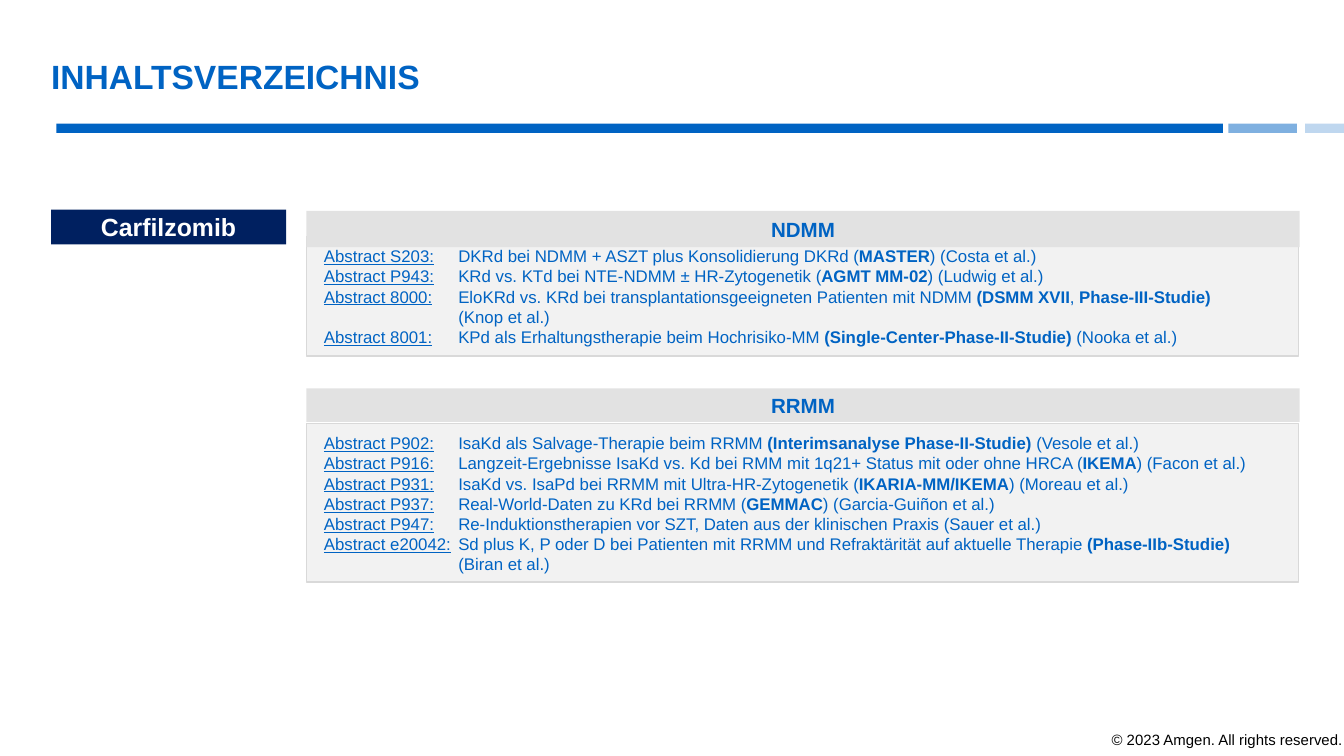
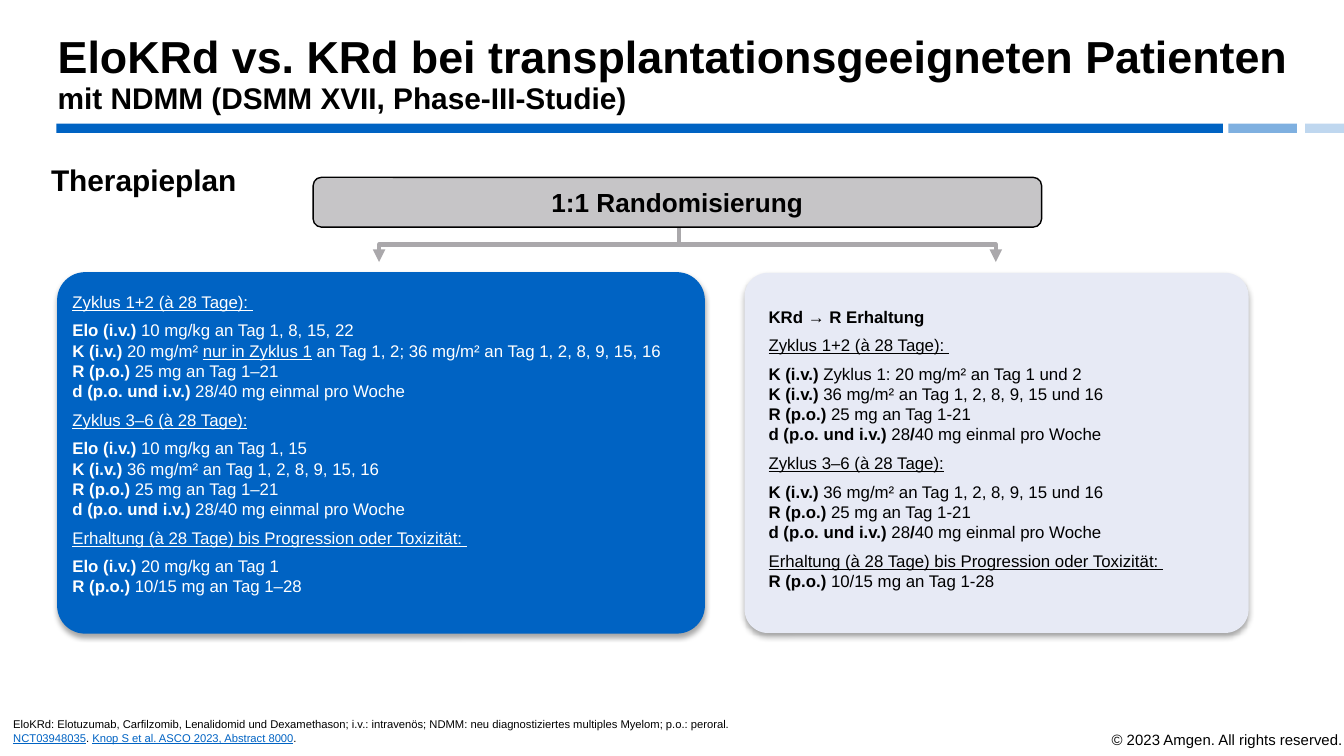
from lxml import etree
from pptx import Presentation
from pptx import util as u
from pptx.dml.color import RGBColor
from pptx.enum import shapes, text
from pptx.oxml.ns import qn

BLUE = RGBColor(0x00, 0x63, 0xC3)
NAVY = RGBColor(0x00, 0x20, 0x60)
WHITE = RGBColor(0xFF, 0xFF, 0xFF)
BLACK = RGBColor(0x00, 0x00, 0x00)
PALE = RGBColor(0xF2, 0xF2, 0xF2)
EDGE = RGBColor(0xD9, 0xD9, 0xD9)
HEAD = RGBColor(0xE2, 0xE2, 0xE2)
MIST = RGBColor(0xE7, 0xEA, 0xF5)
STONE = RGBColor(0xC6, 0xC5, 0xC7)
ARROW = RGBColor(0xAA, 0xA8, 0xAB)

WIDTH = u.Inches(10)
HEIGHT = WIDTH * 9 // 16
FONT = "Arial"
RECT = shapes.MSO_SHAPE.RECTANGLE
ROUND = shapes.MSO_SHAPE.ROUNDED_RECTANGLE
TOP, MID, LOW = text.MSO_ANCHOR.TOP, text.MSO_ANCHOR.MIDDLE, text.MSO_ANCHOR.BOTTOM
LEFT, MIDDLE, RIGHT = text.PP_ALIGN.LEFT, text.PP_ALIGN.CENTER, text.PP_ALIGN.RIGHT

PLAIN = (0.1, 0.05, 0.1, 0.05)
TITLE = (0, 0, 0, 0.05)
PANEL = (0.13, 0.07, 0.13, 0.07)

NDMM = [
    "_Abstract S203:_\tDKRd bei NDMM + ASZT plus Konsolidierung DKRd (*MASTER*) (Costa et al.)",
    "_Abstract P943:_\tKRd vs. KTd bei NTE-NDMM ± HR-Zytogenetik (*AGMT MM-02*) (Ludwig et al.)",
    "_Abstract 8000:_\tEloKRd vs. KRd bei transplantationsgeeigneten Patienten mit NDMM "
    "*(DSMM XVII*, *Phase-III-Studie)*",
    "\t(Knop et al.)",
    "_Abstract 8001:_\tKPd als Erhaltungstherapie beim Hochrisiko-MM "
    "*(Single-Center-Phase-II-Studie)* (Nooka et al.)",
]
RRMM = [
    "_Abstract P902:_\tIsaKd als Salvage-Therapie beim RRMM "
    "*(Interimsanalyse Phase-II-Studie) *(Vesole et al.)",
    "_Abstract P916:_\tLangzeit-Ergebnisse IsaKd vs. Kd bei RMM mit 1q21+ Status "
    "mit oder ohne HRCA (*IKEMA*) (Facon et al.)",
    "_Abstract P931:_\tIsaKd vs. IsaPd bei RRMM mit Ultra-HR-Zytogenetik "
    "(*IKARIA-MM/IKEMA*) (Moreau et al.)",
    "_Abstract P937:_\tReal-World-Daten zu KRd bei RRMM (*GEMMAC*) (Garcia-Guiñon et al.)",
    "_Abstract P947:_\tRe-Induktionstherapien vor SZT, Daten aus der klinischen Praxis (Sauer et al.)",
    "_Abstract e20042:_\tSd plus K, P oder D bei Patienten mit RRMM und Refraktärität "
    "auf aktuelle Therapie *(Phase-IIb-Studie)*",
    "\t(Biran et al.)",
]

START = "_Zyklus 1+2 (à 28 Tage): _"
NEXT = "_Zyklus 3–6 (à 28 Tage):_"
KEEP = "_Erhaltung (à 28 Tage) bis Progression oder Toxizität: _"
ELO_END = "*R (p.o.) *25 mg an Tag 1–21 \n*d (p.o. und i.v.) *28/40 mg einmal pro Woche"
KRD_END = ("*K (i.v.) *36 mg/m² an Tag 1, 2, 8, 9, 15 und 16 \n*R (p.o.) *25 mg an Tag 1-21 \n"
           "*d (p.o. und i.v.) *28*/*40 mg einmal pro Woche")
ELO = [
    START,
    "*Elo (i.v.) *10 mg/kg an Tag 1, 8, 15, 22 \n*K (i.v.)* 20 mg/m² _nur in Zyklus 1_ "
    "an Tag 1, 2; 36 mg/m² an Tag 1, 2, 8, 9, 15, 16\n" + ELO_END,
    NEXT,
    "*Elo (i.v.)* 10 mg/kg an Tag 1, 15\n*K (i.v.)* 36 mg/m² an Tag 1, 2, 8, 9, 15, 16\n" + ELO_END,
    KEEP,
    "*Elo (i.v.)* 20 mg/kg an Tag 1\n*R (p.o.)* 10/15 mg an Tag 1–28",
]
KRD = [
    "*KRd → R Erhaltung*",
    START,
    "*K (i.v.) *Zyklus 1: 20 mg/m² an Tag 1 und 2",
    KRD_END,
    NEXT,
    KRD_END,
    KEEP + "\n*R (p.o.) *10/15 mg an Tag 1-28",
]
NOTES = [
    "EloKRd: Elotuzumab, Carfilzomib, Lenalidomid und Dexamethason; i.v.: intravenös; "
    "NDMM: neu diagnostiziertes multiples Myelom; p.o.: peroral.",
    "_NCT03948035_. _Knop S et al. ASCO 2023, Abstract 8000_.",
]


def apply(item, **vals):
    for key, val in vals.items():
        setattr(item, key, val)


def node(parent, tag, **attrs):
    return etree.SubElement(parent, qn(tag), **attrs)


def split(line):
    for i, part in enumerate(line.split("*")):
        for j, piece in enumerate(part.split("_")):
            if piece:
                yield piece, i % 2 == 1, j % 2 == 1


def add_run(para, words, size, color, **form):
    for i, bit in enumerate(words.split("\n")):
        if i:
            para.add_line_break()
            node(para._p[-1], "a:rPr", sz=str(int(size * 100)))
        if bit:
            run = para.add_run()
            run.text = bit
            apply(run.font, name=FONT, size=u.Pt(size), **form)
            run.font.color.rgb = color


def write(shape, lines, size, color, align=LEFT, anchor=TOP, pad=PLAIN,
          link=None, tab=None, sizes=(), tight=(), **form):
    frame = shape.text_frame
    sides = ("margin_left", "margin_top", "margin_right", "margin_bottom")
    apply(frame, word_wrap=True, vertical_anchor=anchor,
          **{side: u.Inches(gap) for side, gap in zip(sides, pad)})
    for i, line in enumerate(lines):
        para = frame.add_paragraph() if i else frame.paragraphs[0]
        apply(para, alignment=align, **form)
        if i in tight:
            para.space_after = u.Pt(0)
        if tab:
            node(node(para._p.get_or_add_pPr(), "a:tabLst"), "a:tab",
                 pos=str(u.Inches(tab)), algn="l")
        for words, bold, under in split(line):
            add_run(para, words, sizes[i] if sizes else size,
                    link if under and link else color, bold=bold, underline=under)


def add_text(slide, at, lines, size, color, **form):
    box = slide.shapes.add_textbox(*map(u.Inches, at))
    write(box, lines, size, color, **form)


def add_box(slide, at, fill, kind=RECT, edge=None, bend=None):
    box = slide.shapes.add_shape(kind, *map(u.Inches, at))
    box.shadow.inherit = False
    box.fill.solid()
    box.fill.fore_color.rgb = fill
    if edge is None:
        box.line.fill.background()
    else:
        box.line.color.rgb = edge
        box.line.width = u.Pt(0.75)
    if bend:
        box.adjustments[0] = bend
    return box


def add_card(slide, at, fill, bend, edge=None):
    card = add_box(slide, at, fill, ROUND, edge, bend)
    glow = node(card._element.spPr.find(qn("a:effectLst")), "a:outerShdw",
                blurRad=str(u.Pt(3.1)), dist=str(u.Pt(1.8)), dir="5400000",
                algn="t", rotWithShape="0")
    node(node(glow, "a:srgbClr", val=str(BLACK)), "a:alpha", val="35000")


def add_panel(slide, top, head, name, body, high, lines, anchor):
    box = add_box(slide, (2.28, body, 7.38, high), PALE, edge=EDGE)
    write(box, lines, 9, BLUE, anchor=anchor, pad=PANEL, tab=1)
    bar = add_box(slide, (2.28, top, 7.39, head), HEAD)
    write(bar, [f"*{name}*"], 11, BLUE, align=MIDDLE, anchor=MID, pad=PANEL)


def add_branch(slide, x, y, end_x, end_y):
    mid_x, mid_y = (x + end_x) / 2, (y + end_y) / 2
    half = abs(end_x - x) / 2
    right = end_x > x
    side = (end_y - y) / 2 * (-1 if right else 1)
    ends = (mid_x - side, mid_y - half, mid_x + side, mid_y + half)
    line = slide.shapes.add_connector(shapes.MSO_CONNECTOR.ELBOW, *map(u.Inches, ends))
    line.line.width = u.Pt(2.25)
    line.line.color.rgb = ARROW
    props = line._element.spPr
    props.find(qn("a:xfrm")).set("rot", "16200000" if right else "5400000")
    node(props.find(qn("a:ln")), "a:tailEnd", type="triangle")
    node(props, "a:effectLst")


def new_slide(deck):
    slide = deck.slides.add_slide(deck.slide_layouts[6])
    for left, width, tint in ((0.42, 8.68, 100), (9.14, 0.51, 50), (9.71, 0.29, 25)):
        band = add_box(slide, (left, 0.92, width, 0.07), BLUE)
        if tint < 100:
            color = band._element.spPr.find(qn("a:solidFill"))[0]
            node(color, "a:alpha", val=str(tint * 1000))
    add_text(slide, (5.09, 5.39, 5, 0.24), ["© 2023 Amgen. All rights reserved."],
             8, BLACK, align=RIGHT)
    return slide


def add_title(slide, at, lines, size, color, **form):
    add_text(slide, at, [f"*{line}*" for line in lines], size, color,
             anchor=LOW, pad=TITLE, line_spacing=0.9, **form)


def index(deck):
    slide = new_slide(deck)
    add_title(slide, (0.38, 0.27, 9.22, 0.5), ["INHALTSVERZEICHNIS"], 18, BLUE)
    tag = add_box(slide, (0.38, 1.56, 1.75, 0.26), NAVY)
    write(tag, ["*Carfilzomib*"], 13.3, WHITE, align=MIDDLE, anchor=MID, pad=PANEL)
    add_panel(slide, 1.57, 0.27, "NDMM", 1.76, 0.89, NDMM, MID)
    add_panel(slide, 2.89, 0.25, "RRMM", 3.15, 1.18, RRMM, TOP)


def therapy(deck):
    slide = new_slide(deck)
    add_title(slide, (0.38, 1.01, 1.59, 0.51), ["Therapieplan"], 16, BLACK)
    add_card(slide, (5.54, 2.03, 3.75, 2.68), MIST, 0.065)
    add_text(slide, (0, 5.29, 9.51, 0.3), NOTES, 6, BLACK, anchor=LOW, link=BLUE)
    add_card(slide, (0.43, 2.03, 4.81, 2.68), BLUE, 0.076, BLUE)
    add_title(slide, (0.43, 0.41, 9.44, 0.5),
              ["EloKRd vs. KRd bei transplantationsgeeigneten Patienten",
               "mit NDMM (DSMM XVII, Phase-III-Studie)"], 24, BLACK, sizes=(24, 16))
    add_text(slide, (0.44, 2.12, 4.71, 2.42), ELO, 9, WHITE, space_after=u.Pt(4.5))
    add_text(slide, (5.62, 2.23, 3.81, 2.27), KRD, 9, BLACK, space_after=u.Pt(4.5), tight=(2,))
    for end in (7.41, 2.82):
        add_branch(slide, 5.05, 1.69, end, 1.95)
    box = add_box(slide, (2.33, 1.32, 5.42, 0.37), STONE, ROUND, BLACK)
    write(box, ["*1:1 Randomisierung*"], 14, BLACK, align=MIDDLE, anchor=MID)


def main():
    deck = Presentation()
    apply(deck, slide_width=WIDTH, slide_height=HEIGHT)
    index(deck)
    therapy(deck)
    deck.save("out.pptx")


if __name__ == "__main__":
    main()
